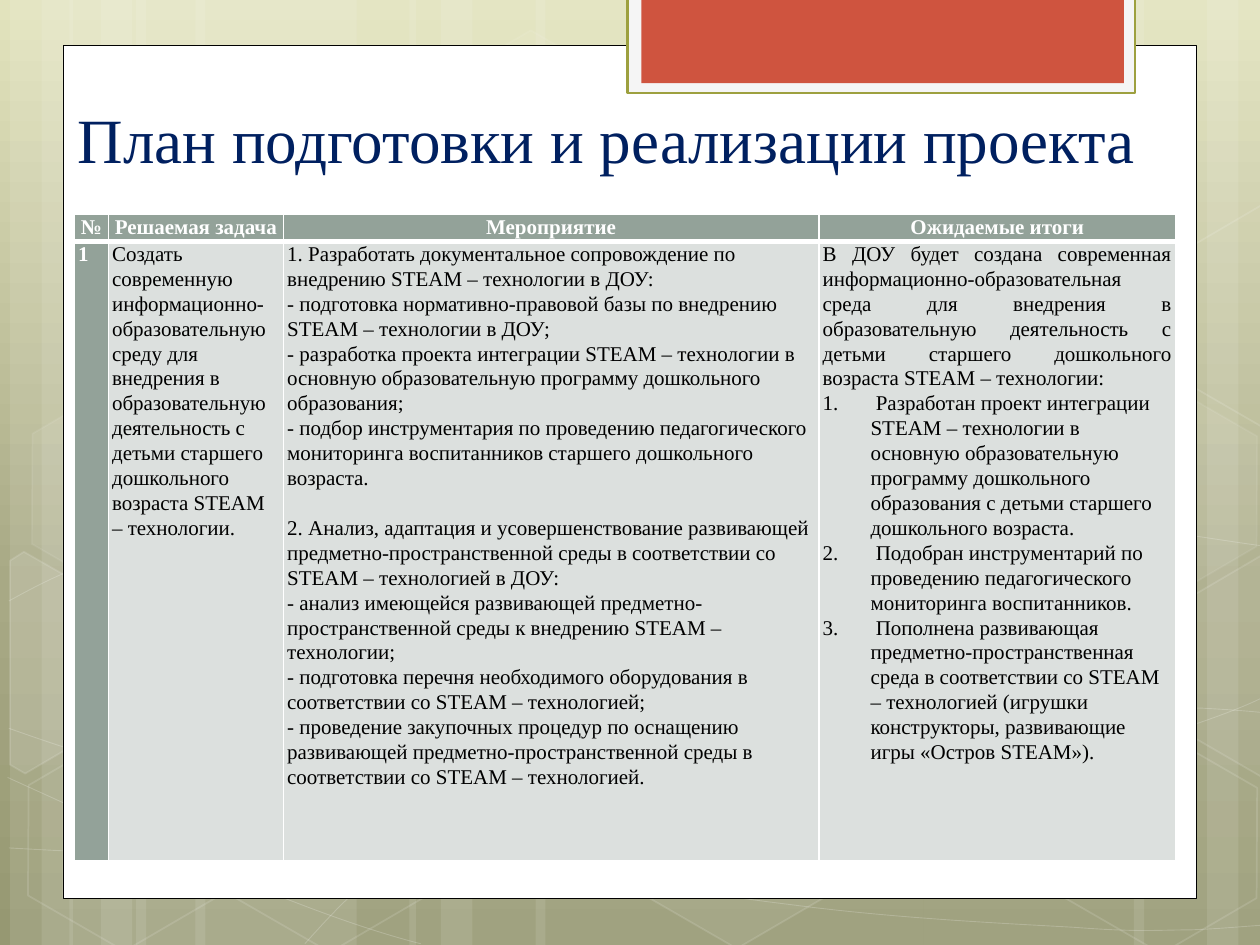
from copy import deepcopy

from lxml import etree
from pptx import Presentation
from pptx.dml.color import RGBColor
from pptx.enum.shapes import MSO_SHAPE
from pptx.enum.text import MSO_ANCHOR, PP_ALIGN
from pptx.oxml import parse_xml
from pptx.oxml.ns import nsdecls, qn
from pptx.util import Inches, Pt

RECT, HEXAGON = MSO_SHAPE.RECTANGLE, MSO_SHAPE.HEXAGON
LEFT, CENTER, JUSTIFY = PP_ALIGN.LEFT, PP_ALIGN.CENTER, PP_ALIGN.JUSTIFY
WHITE = RGBColor(0xFF, 0xFF, 0xFF)
BLACK = RGBColor(0x00, 0x00, 0x00)
NAVY = RGBColor(0x00, 0x20, 0x60)
OFF_WHITE = RGBColor(0xF5, 0xF5, 0xF5)
OLIVE = RGBColor(0x9D, 0xA0, 0x3F)
RED = RGBColor(0xCF, 0x54, 0x3F)
SAGE = RGBColor(0x93, 0xA2, 0x99)
PALE = RGBColor(0xDC, 0xE0, 0xDE)
BACKGROUND = [(0, RGBColor(0xE2, 0xE3, 0xBD)), (0.62, RGBColor(0xA8, 0xA9, 0x85)),
              (1, RGBColor(0x96, 0x98, 0x72))]
FONT = "Times New Roman"

prs = Presentation()
prs.slide_width, prs.slide_height = Inches(10), Inches(7.5)
slide = prs.slides.add_slide(prs.slide_layouts[6])
shapes = slide.shapes


def paint(s, fill=None, fill_alpha=100, line=None, width=1, line_alpha=100):
    """Fill and outline a shape, with opacity in percent."""
    s.shadow.inherit = False
    for part, color in ((s.fill, fill), (s.line.fill, line)):
        if color is None:
            part.background()
        else:
            part.solid()
            part.fore_color.rgb = color
    if line is not None:
        s.line.width = Pt(width)
    for query, alpha in (("./a:solidFill/a:srgbClr", fill_alpha),
                         ("./a:ln/a:solidFill/a:srgbClr", line_alpha)):
        for clr in s._element.spPr.xpath(query):
            if alpha < 100:
                etree.SubElement(clr, qn("a:alpha")).set("val", str(alpha * 1000))


def add_outline(points, closed):
    """Draw a freeform through points given in inches."""
    pts = [(Inches(x), Inches(y)) for x, y in points]
    builder = shapes.build_freeform(*pts[0], scale=1.0)
    builder.add_line_segments(pts[1:], close=closed)
    return builder.convert_to_shape()


# Background gradient, light at the top
bg = slide.background.fill
bg.gradient()
bg.gradient_angle = 270
stop_list = slide._element.xpath(".//a:gsLst")[0]
stop_list.append(deepcopy(stop_list[0]))
for stop, (position, color) in zip(bg.gradient_stops, BACKGROUND):
    stop.position = position
    stop.color.rgb = color

# Vertical stripes: left, width
stripes = [(1.08, 1.75), (0.08, 0.5), (0.33, 0.83), (1.55, 1.75), (0.55, 0.5), (0.8, 0.83),
           (7.33, 1.75), (9.58, 0.5), (9, 0.83), (4.25, 3.08), (3.25, 0.5), (3.5, 0.83)]
for x, w in stripes:
    paint(shapes.add_shape(RECT, Inches(x), 0, Inches(w), Inches(7.5)), WHITE, 10)

# Thin curves: a start point, then two control points and an end point per Bezier piece
curves = [
    [(0.07, 6.73), (0.61, 6.76), (1.15, 6.79), (1.9, 6.78), (2.65, 6.77), (3.58, 6.75),
     (4.58, 6.65), (5.58, 6.55), (7, 6.36), (7.92, 6.17), (8.83, 5.98), (9.77, 5.68),
     (10.07, 5.51)],
    [(0.07, 4.77), (0.36, 4.61), (0.65, 4.46), (1.21, 4.31), (1.78, 4.16), (2.59, 3.94),
     (3.47, 3.87), (4.36, 3.8), (5.44, 3.79), (6.54, 3.87), (7.64, 3.95), (9.47, 4.26),
     (10.07, 4.34)],
    [(0.06, 6.17), (1.27, 6.72), (2.47, 7.27), (3.34, 7.49)],
    [(0.07, 5.78), (0.38, 5.89), (0.7, 6), (1.28, 6.16), (1.86, 6.31), (2.73, 6.56),
     (3.57, 6.73), (4.4, 6.9), (5.45, 7.08), (6.28, 7.18), (7.11, 7.29), (8, 7.33),
     (8.53, 7.36), (9.05, 7.4), (9.19, 7.38), (9.45, 7.38), (9.71, 7.37), (9.89, 7.35),
     (10.07, 7.34)],
    [(2.42, 7.49), (2.6, 7.29), (2.78, 7.09), (3.02, 6.91), (3.26, 6.73), (3.6, 6.53),
     (3.88, 6.39), (4.16, 6.25), (4.33, 6.19), (4.7, 6.09), (5.06, 5.99), (5.73, 5.85),
     (6.08, 5.78), (6.44, 5.71), (6.49, 5.71), (6.8, 5.69), (7.11, 5.66), (7.6, 5.63),
     (7.94, 5.62), (8.29, 5.61), (8.86, 5.62), (9.53, 5.62), (9.71, 5.63), (9.88, 5.64),
     (10.06, 5.66)],
]
for curve in curves:
    s = add_outline(curve, False)
    segments = s._element.xpath(".//a:lnTo")
    for i in range(0, len(segments), 3):
        bezier = etree.Element(qn("a:cubicBezTo"))
        segments[i].addprevious(bezier)
        for segment in segments[i:i + 3]:
            bezier.append(segment[0])
            segment.getparent().remove(segment)
    paint(s, line=WHITE, width=0.5, line_alpha=20)

# Hexagons: left, top, fill opacity, line opacity
hexagons = [(3.34, 0.36, 4, 8), (4.97, 5.89, 6, 12), (0.11, 5.91, 0, 12), (0.14, 3.12, 7, 8),
            (1.74, 5.92, 0, 12), (7.53, 4.53, 10, 12), (8.34, 5.93, 0, 12), (8.34, 3.14, 7, 8)]
for x, y, fill_alpha, line_alpha in hexagons:
    s = shapes.add_shape(HEXAGON, Inches(x), Inches(y), Inches(1.75), Inches(1.52))
    s.adjustments[0] = 0.285
    s.rotation = 30
    paint(s, WHITE if fill_alpha else None, fill_alpha, WHITE, 1, line_alpha)

# Hexagons cut by the slide edge
cut_hexagons = [
    ([(0.08, 4.45), (0.19, 4.38), (0.96, 4.82), (0.95, 5.7), (0.2, 6.14), (0.08, 6.07)], 10),
    ([(9.26, 4.85), (10.01, 4.41), (10.09, 4.46), (10.09, 6.13), (10.02, 6.17), (9.26, 5.73)], 4),
    ([(9.26, 2.07), (10.01, 1.63), (10.1, 1.68), (10.09, 3.35), (10.02, 3.39), (9.26, 2.95)], 0),
]
for points, alpha in cut_hexagons:
    paint(add_outline(points, True), WHITE if alpha else None, alpha, WHITE, 1, 12)

# White page and the red tab at its top
panels = [(0.5, 0.36, 9, 6.77, WHITE, BLACK, 0.5),
          (4.98, -0.02, 4.03, 0.76, OFF_WHITE, OLIVE, 1.25),
          (5.09, -0.02, 3.83, 0.68, RED, None, 0)]
for x, y, w, h, fill, line, width in panels:
    s = shapes.add_shape(RECT, Inches(x), Inches(y), Inches(w), Inches(h))
    paint(s, fill, line=line, width=width)

# Title
tf = shapes.add_textbox(Inches(0.52), Inches(0.2), Inches(9.06), Inches(1.25)).text_frame
tf.word_wrap = True
tf.vertical_anchor = MSO_ANCHOR.BOTTOM
tf.text = "План подготовки и реализации проекта"
font = tf.paragraphs[0].runs[0].font
font.name, font.size, font.color.rgb = FONT, Pt(36), NAVY

# Plan table: each cell is a list of paragraphs
header = ["№", "Решаемая задача", "Мероприятие", "Ожидаемые итоги"]
task = ["Создать современную информационно-образовательную среду для внедрения в "
        "образовательную деятельность с детьми старшего дошкольного возраста STEAM – технологии."]
activities = [
    "1. Разработать документальное сопровождение по внедрению STEAM – технологии в ДОУ:",
    "- подготовка нормативно-правовой базы по внедрению STEAM – технологии в ДОУ;",
    "- разработка проекта интеграции STEAM – технологии в основную образовательную программу "
    "дошкольного образования;",
    "- подбор инструментария по проведению педагогического мониторинга воспитанников старшего "
    "дошкольного возраста.",
    "2. Анализ, адаптация и усовершенствование развивающей предметно-пространственной среды в "
    "соответствии со STEAM – технологией в ДОУ:",
    "- анализ имеющейся развивающей предметно-пространственной среды к внедрению "
    "STEAM – технологии;",
    "- подготовка перечня необходимого оборудования в соответствии со STEAM – технологией;",
    "- проведение закупочных процедур по оснащению развивающей предметно-пространственной "
    "среды в соответствии со STEAM – технологией.",
]
results = [
    "В ДОУ будет создана современная информационно-образовательная среда для внедрения в "
    "образовательную деятельность с детьми старшего дошкольного возраста STEAM – технологии:",
    " Разработан проект интеграции STEAM – технологии в основную образовательную программу "
    "дошкольного образования с детьми старшего дошкольного возраста.",
    " Подобран инструментарий по проведению педагогического мониторинга воспитанников.",
    " Пополнена развивающая предметно-пространственная среда в соответствии со "
    "STEAM – технологией (игрушки конструкторы, развивающие игры «Остров STEAM»).",
]
rows = [[[text] for text in header], [["1"], task, activities, results]]

table = shapes.add_table(2, 4, Inches(0.59), Inches(1.7), Inches(8.74), Inches(5.11)).table
for col, w in zip(table.columns, (0.27, 1.39, 4.25, 2.83)):
    col.width = Inches(w)
for row, h in zip(table.rows, (0.19, 4.92)):
    row.height = Inches(h)

for i, row in enumerate(rows):
    for j, texts in enumerate(row):
        cell = table.cell(i, j)
        heading = i == 0 or j == 0
        cell.margin_left = cell.margin_right = Inches(0.03)
        cell.margin_top = cell.margin_bottom = 0
        cell.fill.solid()
        cell.fill.fore_color.rgb = SAGE if heading else PALE
        tcPr = cell._tc.get_or_add_tcPr()
        widths = {"lnL": 1, "lnR": 1, "lnT": 1, "lnB": 1 if i else 3}
        for n, (side, width) in enumerate(widths.items()):
            tcPr.insert(n, parse_xml(
                f'<a:{side} {nsdecls("a")} w="{Pt(width)}"><a:solidFill>'
                f'<a:srgbClr val="{WHITE}"/></a:solidFill></a:{side}>'))
        cell.text_frame.text = "\n".join(texts)
        for n, p in enumerate(cell.text_frame.paragraphs):
            p.line_spacing = 1.07
            p.alignment = CENTER if i == 0 else JUSTIFY if j in (0, 3) and n == 0 else LEFT
            if texts[n].startswith("2."):
                p.space_before = Pt(14.25)
            if texts is results and n > 0:
                pPr = p._p.get_or_add_pPr()
                pPr.set("marL", str(Inches(0.38)))
                pPr.set("indent", str(-Inches(0.38)))
                etree.SubElement(pPr, qn("a:buAutoNum")).set("type", "arabicPeriod")
            font = p.runs[0].font
            font.name, font.size, font.bold = FONT, Pt(12), heading
            font.color.rgb = WHITE if heading else BLACK

prs.save("out.pptx")
